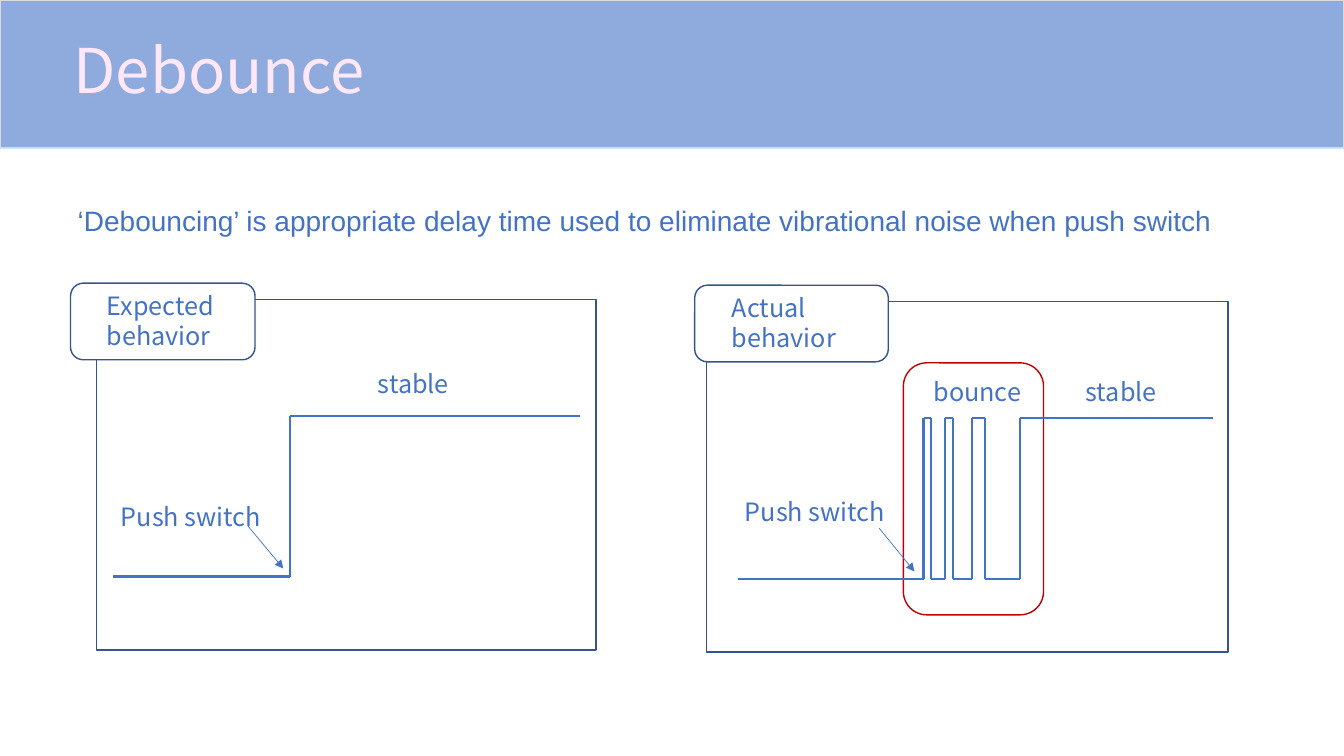
from itertools import pairwise
from lxml.etree import SubElement
from pptx import Presentation
from pptx.dml.color import RGBColor
from pptx.enum.shapes import MSO_CONNECTOR, MSO_SHAPE
from pptx.enum.text import MSO_ANCHOR, MSO_AUTO_SIZE, PP_ALIGN
from pptx.oxml.ns import qn
from pptx.util import Inches, Pt


def color(code):
    return RGBColor.from_string(code)


class Board:
    font = "Noto Sans CJK KR"
    blue = "4472C4"
    navy = "325491"
    red = "C00000"
    white = "FFFFFF"

    def __init__(self, deck):
        self.slide = deck.slides.add_slide(deck.slide_layouts[1])
        self.shapes = self.slide.shapes

    def style(self, para, size, font, code):
        para.font.size = Pt(size)
        para.font.name = font
        para.font.color.rgb = color(code)

    def box(self, kind, area, line=navy, fill=white):
        shape = self.shapes.add_shape(kind, *map(Inches, area))
        shape.shadow.inherit = False
        shape.fill.solid()
        shape.fill.fore_color.rgb = color(fill)
        shape.line.color.rgb = color(line)
        shape.line.width = Pt(1)

    def holder(self, index, area, text, size, font, code, anchor):
        shape = self.slide.placeholders[index]
        self.shapes._spTree.append(shape._element)
        shape.left, shape.top, shape.width, shape.height = map(Inches, area)
        frame = shape.text_frame
        frame.text = text
        frame.word_wrap = True
        frame.auto_size = MSO_AUTO_SIZE.NONE
        frame.vertical_anchor = anchor
        para = frame.paragraphs[0]
        para.alignment = PP_ALIGN.LEFT
        para.line_spacing = 0.9
        self.style(para, size, font, code)
        return para

    def title(self, area, text):
        self.holder(0, area, text, 44, self.font, "FFE7FA", MSO_ANCHOR.MIDDLE)

    def body(self, area, text):
        para = self.holder(1, area, text, 20, "Arial", self.blue, MSO_ANCHOR.TOP)
        para.space_before = Pt(10)
        props = para._p.get_or_add_pPr()
        props.set("marL", "0")
        props.set("indent", "0")
        SubElement(props, qn("a:buNone"))

    def label(self, area, text):
        shape = self.shapes.add_textbox(*map(Inches, area))
        frame = shape.text_frame
        frame.word_wrap = True
        frame.auto_size = MSO_AUTO_SIZE.SHAPE_TO_FIT_TEXT
        frame.text = text
        for para in frame.paragraphs:
            self.style(para, 18, self.font, self.blue)

    def line(self, start, end, width=1.5):
        link = self.shapes.add_connector(
            MSO_CONNECTOR.STRAIGHT, *map(Inches, (*start, *end)))
        link.line.color.rgb = color(self.blue)
        link.line.width = Pt(width)
        SubElement(link._element.spPr, qn("a:effectLst"))
        return link

    def arrow(self, start, end):
        link = self.line(start, end, 0.5)
        SubElement(link.line._get_or_add_ln(), qn("a:tailEnd"), type="triangle")

    def signal(self, left, right, edges, low, high):
        points = [(left, low)]
        for count, x in enumerate(edges):
            step = [(x, low), (x, high)]
            points += step[::-1] if count % 2 else step
        points.append((right, high))
        for start, end in pairwise(points):
            self.line(start, end)


def main():
    deck = Presentation()
    deck.slide_width = Inches(13.33)
    deck.slide_height = Inches(7.5)
    board = Board(deck)
    rect, curve = MSO_SHAPE.RECTANGLE, MSO_SHAPE.ROUNDED_RECTANGLE

    board.box(rect, (0, 0, 13.33, 1.47), "D6DCE5", "8FAADC")
    board.title((0.63, 0.03, 9.59, 1.4), "Debounce")
    board.body((0.67, 2.01, 12.64, 4.95),
               "‘Debouncing’ is appropriate delay time used to eliminate "
               "vibrational noise when push switch")

    board.box(rect, (0.96, 2.97, 4.95, 3.48))
    board.box(curve, (0.7, 2.81, 1.83, 0.76))
    board.label((0.96, 2.83, 1.64, 0.71), "Expected behavior")
    board.label((3.65, 3.6, 1.64, 0.4), "stable")
    board.label((1.1, 4.92, 1.71, 0.4), "Push switch")
    board.signal(1.12, 5.75, [2.88], 5.72, 4.13)
    board.arrow((2.46, 5.22), (2.81, 5.64))

    board.box(rect, (7.01, 2.99, 5.17, 3.48))
    board.box(curve, (8.96, 3.6, 1.39, 2.5), board.red)
    board.box(curve, (6.89, 2.83, 1.92, 0.76))
    board.label((7.16, 2.85, 1.71, 0.71), "Actual\nbehavior")
    board.label((9.16, 3.68, 1.71, 0.4), "bounce")
    board.label((10.67, 3.68, 1.71, 0.4), "stable")
    board.label((7.29, 4.87, 1.71, 0.4), "Push switch")
    edges = [9.16, 9.23, 9.37, 9.45, 9.64, 9.77, 10.12]
    board.signal(7.32, 12.03, edges, 5.74, 4.15)
    board.arrow((8.72, 5.24), (9.07, 5.67))

    deck.save("out.pptx")


if __name__ == "__main__":
    main()
